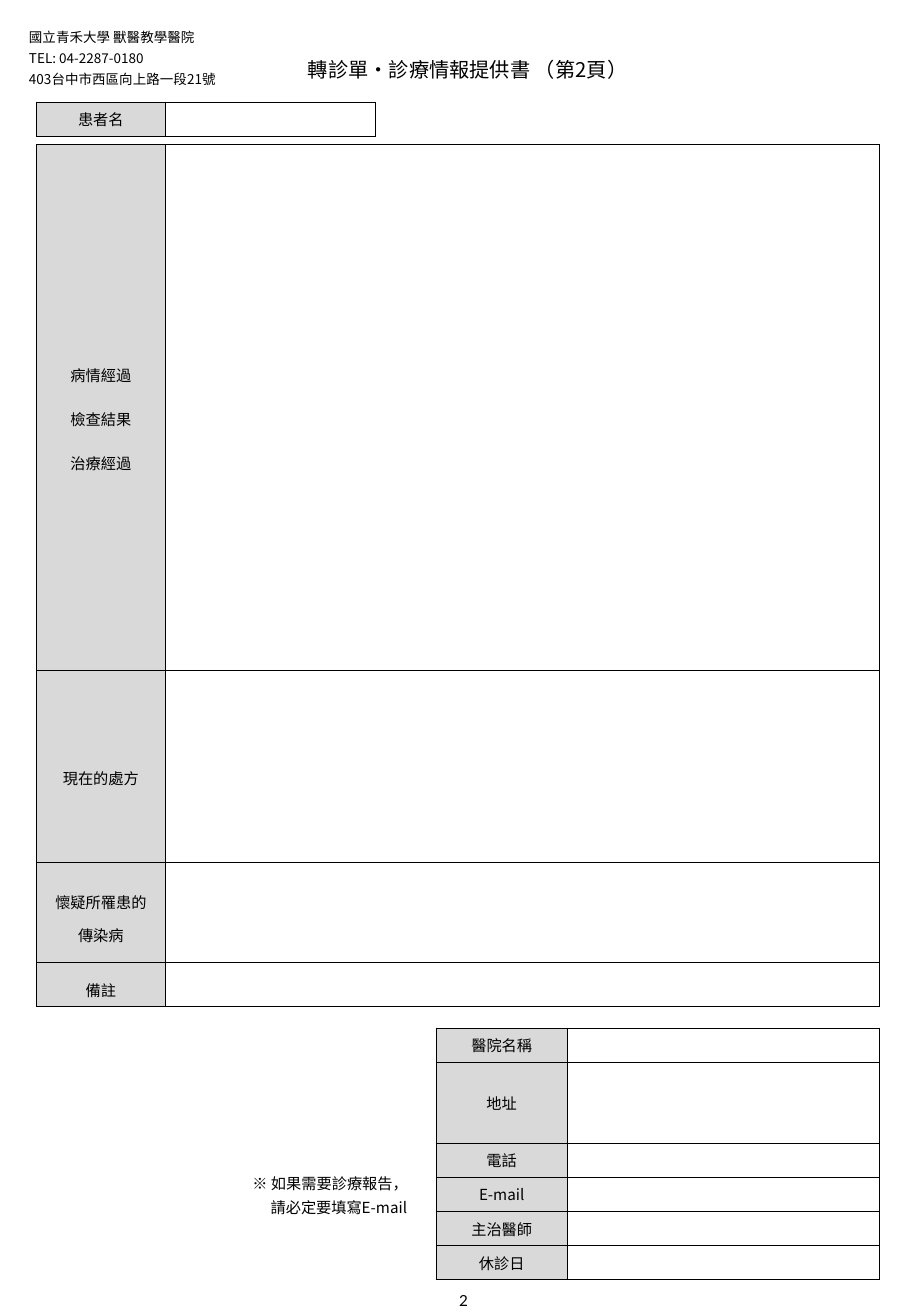
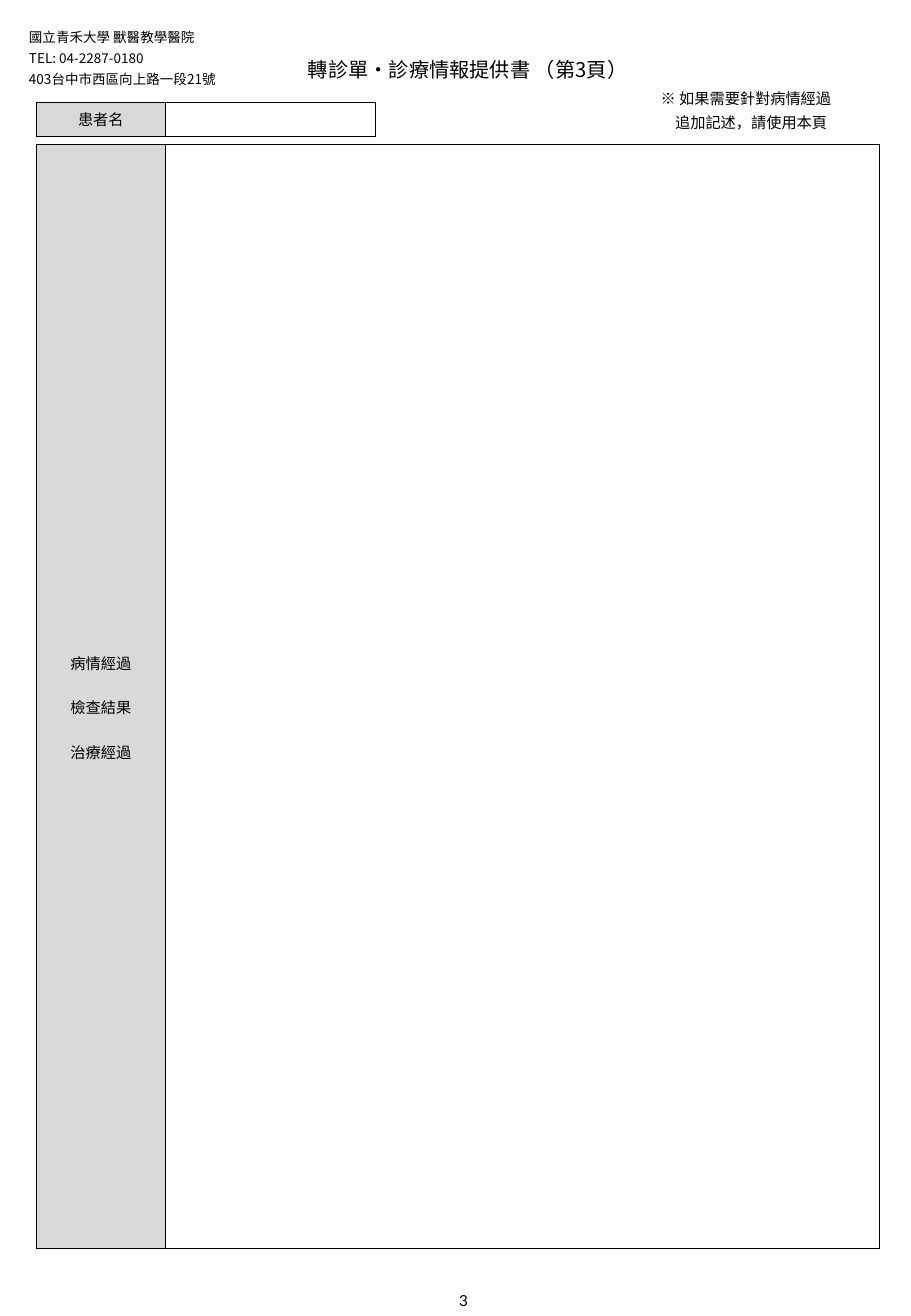
from lxml import etree
from pptx import Presentation
from pptx.dml.color import RGBColor
from pptx.enum import text
from pptx.oxml import ns
from pptx.util import Inches, Pt

BLACK = RGBColor(0x00, 0x00, 0x00)
LABEL_GRAY = RGBColor(0xD9, 0xD9, 0xD9)
WHITE = RGBColor(0xFF, 0xFF, 0xFF)
CJK_FONT = "Noto Sans CJK TC"
NUMBER_FONT = "Lato"
LEFT, LABEL_WIDTH, FULL_WIDTH = 0.3, 1.06, 6.94
ROW_HEIGHT = 0.28
HOSPITAL = ["國立青禾大學 獸醫教學醫院", "TEL: 04-2287-0180", "403台中市西區向上路一段21號"]
COURSE = ["病情經過", "檢查結果", "治療經過"]


class Form:
    """Holds the form's style and the slide being filled in."""

    def __init__(self):
        self.presentation = Presentation()
        self.presentation.slide_width = Inches(7.5)
        self.presentation.slide_height = Inches(10.83)
        self.slide = None

    def start_page(self, number):
        """Add a slide with everything that all pages share."""
        self.slide = self.presentation.slides.add_slide(self.presentation.slide_layouts[5])
        self.slide.background.fill.solid()
        self.slide.background.fill.fore_color.rgb = WHITE
        self.title(f"轉診單・診療情報提供書 （第{number}頁）")
        self.textbox(HOSPITAL, 0.14, 0.15, 2.15, 0.61, size=8)
        self.table([(["患者名"], ROW_HEIGHT, 1)], LEFT, 0.84, 2.79)
        self.page_number(number)

    def style_run(self, run, size, font=CJK_FONT):
        """Apply size, colour and both typefaces to a run."""
        run.font.size = Pt(size)
        run.font.color.rgb = BLACK
        run.font.name = font
        etree.SubElement(run.font._element, ns.qn("a:ea"), typeface=font)

    def add_lines(self, frame, lines, size=9, spacing=1, align=text.PP_ALIGN.LEFT, font=CJK_FONT):
        """Put one paragraph per line into a text frame."""
        frame.word_wrap = True
        for index, line in enumerate(lines):
            paragraph = frame.add_paragraph() if index else frame.paragraphs[0]
            paragraph.alignment = align
            paragraph.line_spacing = spacing
            run = paragraph.add_run()
            run.text = line
            self.style_run(run, size, font)

    def place(self, shape, left, top, width, height):
        """Move and size a shape."""
        shape.left, shape.top = Inches(left), Inches(top)
        shape.width, shape.height = Inches(width), Inches(height)

    def title(self, words):
        """Fill the title placeholder."""
        title = self.slide.shapes.title
        self.place(title, 0.59, 0.42, 6.52, 0.3)
        title.text_frame.auto_size = text.MSO_AUTO_SIZE.NONE
        title.text_frame.vertical_anchor = text.MSO_ANCHOR.TOP
        self.add_lines(title.text_frame, [words], size=12, align=text.PP_ALIGN.CENTER)

    def textbox(self, lines, left, top, width, height, size=9):
        """Add a left-aligned text box and return its text frame."""
        box = self.slide.shapes.add_textbox(
            Inches(left), Inches(top), Inches(width), Inches(height))
        self.add_lines(box.text_frame, lines, size, spacing=1.3)
        box.text_frame.paragraphs[0].space_before = Pt(6)
        return box.text_frame

    def note(self, first, second, left, top, hanging):
        """Add a two-line note with a hanging indent."""
        paragraph = self.textbox([first], left, top, 1.77, 0.47).paragraphs[0]
        paragraph.add_line_break()
        run = paragraph.add_run()
        run.text = second
        self.style_run(run, 9)
        properties = paragraph._p.get_or_add_pPr()
        properties.set("marL", str(Inches(hanging)))
        properties.set("indent", str(-Inches(hanging)))

    def page_number(self, number):
        """Add the centred page number at the foot."""
        box = self.slide.shapes.add_textbox(
            Inches(2.97), Inches(10.62), Inches(1.69), Inches(0.16))
        frame = box.text_frame
        frame.margin_top = frame.margin_bottom = 0
        frame.vertical_anchor = text.MSO_ANCHOR.MIDDLE
        self.add_lines(frame, [str(number)], align=text.PP_ALIGN.CENTER, font=NUMBER_FONT)

    def border(self, cell):
        """Draw a thin black line on each side of a cell."""
        properties = cell._tc.get_or_add_tcPr()
        for index, side in enumerate(("lnL", "lnR", "lnT", "lnB")):
            line = etree.Element(ns.qn(f"a:{side}"), w=str(Pt(0.5)))
            fill = etree.SubElement(line, ns.qn("a:solidFill"))
            etree.SubElement(fill, ns.qn("a:srgbClr"), val=str(BLACK))
            properties.insert(index, line)

    def table(self, rows, left, top, width, label_width=LABEL_WIDTH):
        """Add a table of gray labels beside blank answers."""
        height = sum(row[1] for row in rows)
        table = self.slide.shapes.add_table(
            len(rows), 2, Inches(left), Inches(top), Inches(width), Inches(height)).table
        table.first_row = table.horz_banding = False
        table.columns[0].width = Inches(label_width)
        table.columns[1].width = Inches(width - label_width)
        for index, (lines, row_height, spacing) in enumerate(rows):
            table.rows[index].height = Inches(row_height)
            label, answer = table.cell(index, 0), table.cell(index, 1)
            for cell in (label, answer):
                cell.margin_top = cell.margin_bottom = Inches(0.04)
                cell.vertical_anchor = text.MSO_ANCHOR.MIDDLE
                self.border(cell)
            label.fill.solid()
            label.fill.fore_color.rgb = LABEL_GRAY
            self.add_lines(label.text_frame, lines, spacing=spacing, align=text.PP_ALIGN.CENTER)
            answer.fill.background()
            blank = answer.text_frame.paragraphs[0]._p
            etree.SubElement(blank, ns.qn("a:endParaRPr"), sz="900")


def main():
    """Build both pages of the referral form."""
    form = Form()

    form.start_page(2)
    form.table([(COURSE, 4.33, 2), (["現在的處方"], 1.58, 2),
                (["懷疑所罹患的傳染病"], 0.82, 1.5), (["備註"], 0.36, 1.5)],
               LEFT, 1.19, FULL_WIDTH)
    contacts = ["醫院名稱", "地址", "電話", "E-mail", "主治醫師", "休診日"]
    form.table([([name], 0.67 if name == "地址" else ROW_HEIGHT, 1) for name in contacts],
               3.59, 8.46, 3.65, label_width=1.08)
    form.note("※ 如果需要診療報告，", "請必定要填寫E-mail", 1.98, 9.57, 0.15)

    form.start_page(3)
    form.table([(COURSE, 9.08, 2)], LEFT, 1.19, FULL_WIDTH)
    form.note("※ 如果需要針對病情經過", "追加記述，請使用本頁", 5.34, 0.64, 0.12)

    form.presentation.save("out.pptx")


if __name__ == "__main__":
    main()
